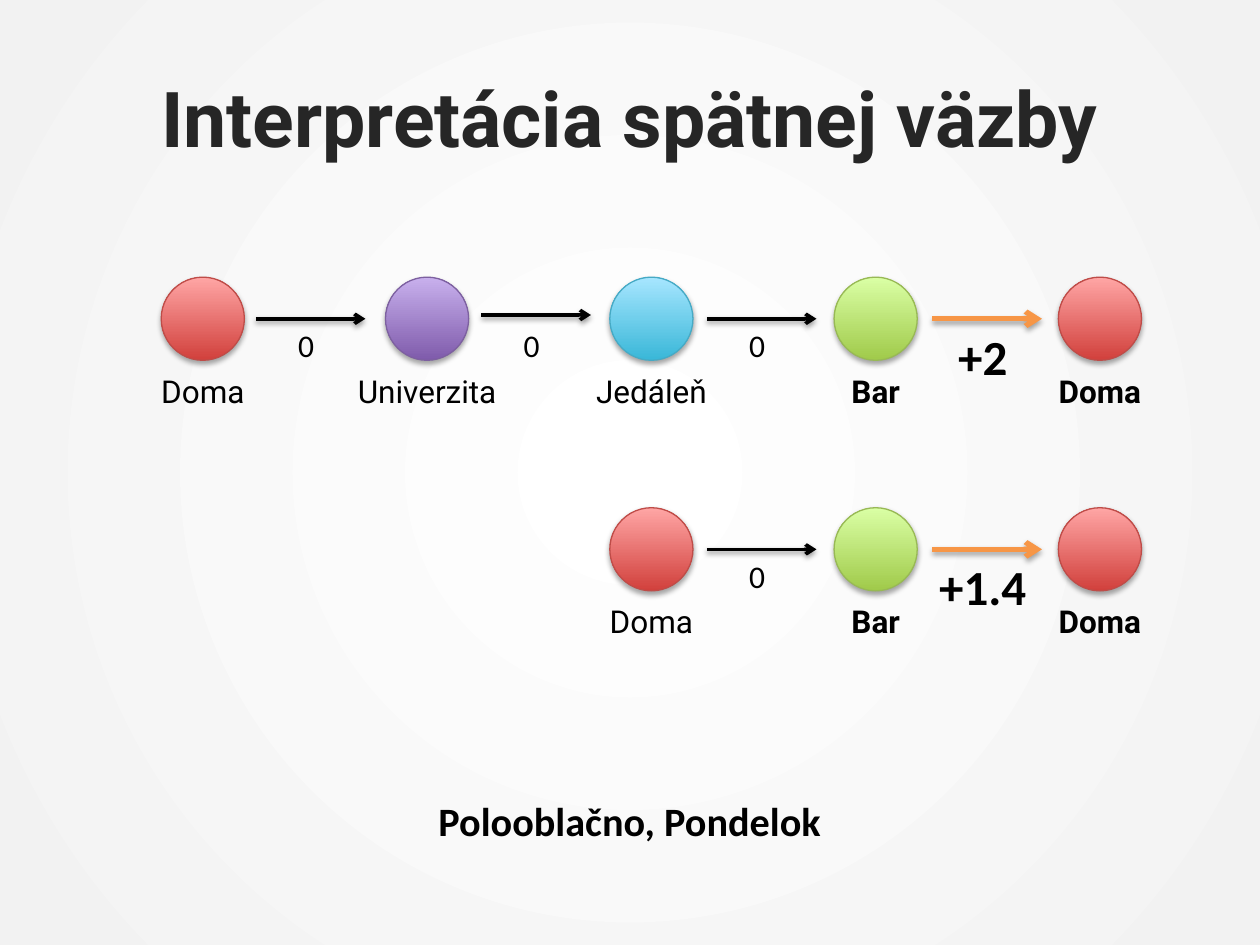
from dataclasses import dataclass

from lxml import etree
from pptx import Presentation
from pptx.dml.color import RGBColor
from pptx.enum.shapes import MSO_CONNECTOR as CONN, MSO_SHAPE as SHAPE
from pptx.enum.text import MSO_ANCHOR as ANCHOR, MSO_AUTO_SIZE as FIT, PP_ALIGN as ALIGN
from pptx.oxml.ns import qn
from pptx.util import Inches, Pt


@dataclass(frozen=True)
class Theme:
    head: str = "Roboto"
    body: str = "Calibri"
    title: str = "262626"
    ink: str = "000000"
    accent: str = "F79646"
    back: tuple = ("FFFFFF", "F2F2F2")
    # bottom, top, outline
    red: tuple = ("D1403C", "FFA6A5", "BF4C48")
    purple: tuple = ("7F5BAB", "C8B0ED", "7D60A0")
    blue: tuple = ("39B7D8", "A7E6FF", "46AAC5")
    green: tuple = ("A0CA4A", "DAFFA5", "98B955")
    title_size: int = 44
    reward_size: int = 28
    caption_size: int = 23
    label_size: int = 18


THEME = Theme()
rgb = RGBColor.from_string

# Grid of the chains, in inches
LEFT, PITCH, SIZE = 1.28, 1.78, 0.66
ARROW_LEFT, ARROW_PITCH, ARROW_LEN = 2.03, 1.79, 0.87
LABEL_GAP = 0.37

# Place name: colours, label width
PLACES = {
    "Doma": (THEME.red, 0.87),
    "Univerzita": (THEME.purple, 1.37),
    "Jedáleň": (THEME.blue, 1.09),
    "Bar": (THEME.green, 0.61),
}

# Centre line, first column, places, rewards as (text, width, arrow shift)
CHAINS = [
    (2.53, 0, ["Doma", "Univerzita", "Jedáleň", "Bar", "Doma"],
     [("0", 0.33, 0), ("0", 0.33, -0.03), ("0", 0.33, 0), ("+2", 0.6, 0)]),
    (4.36, 2, ["Doma", "Bar", "Doma"], [("0", 0.33, 0), ("+1.4", 0.9, 0)]),
]


class Painter:
    def __init__(self, slide, theme):
        self.slide, self.theme = slide, theme

    def gradient(self, fill, colors):
        fill.gradient()
        for stop, color in zip(fill.gradient_stops, colors):
            stop.color.rgb = rgb(color)

    def background(self):
        fill = self.slide.background.fill
        self.gradient(fill, self.theme.back)
        lin = next(self.slide.element.iter(qn("a:lin")))
        path = etree.Element(qn("a:path"), path="circle")
        etree.SubElement(path, qn("a:fillToRect"), dict.fromkeys("ltrb", "50000"))
        lin.getparent().replace(lin, path)

    def shadow(self, s, dist, alpha):
        effects = etree.SubElement(s.element.spPr, qn("a:effectLst"))
        outer = etree.SubElement(effects, qn("a:outerShdw"), blurRad=str(Pt(3.1)),
                                 dist=str(Pt(dist)), dir="5400000", rotWithShape="0")
        color = etree.SubElement(outer, qn("a:srgbClr"), val=self.theme.ink)
        etree.SubElement(color, qn("a:alpha"), val=str(alpha * 1000))

    def text(self, text, x, y, w, h, size, font, color=None, bold=False, wrap=False):
        tb = self.slide.shapes.add_textbox(Inches(x), Inches(y), Inches(w), Inches(h))
        tf = tb.text_frame
        frame = {"word_wrap": wrap,
                 "auto_size": FIT.NONE if wrap else FIT.SHAPE_TO_FIT_TEXT,
                 "vertical_anchor": ANCHOR.MIDDLE if wrap else ANCHOR.TOP}
        for name, value in frame.items():
            setattr(tf, name, value)
        p = tf.paragraphs[0]
        p.alignment = ALIGN.CENTER
        r = p.add_run()
        r.text = text
        for name, value in {"size": Pt(size), "name": font, "bold": bold}.items():
            setattr(r.font, name, value)
        r.font.color.rgb = rgb(color or self.theme.ink)

    def ball(self, x, y, colors):
        s = self.slide.shapes.add_shape(SHAPE.OVAL, Inches(x), Inches(y),
                                        Inches(SIZE), Inches(SIZE))
        bottom, top, outline = colors
        self.gradient(s.fill, (bottom, top))
        s.fill.gradient_angle = 90
        s.line.color.rgb = rgb(outline)
        s.line.width = Pt(0.75)
        self.shadow(s, 1.8, 35)

    def arrow(self, x, y, strong):
        s = self.slide.shapes.add_connector(CONN.STRAIGHT, Inches(x), Inches(y),
                                            Inches(x + ARROW_LEN), Inches(y))
        s.line.color.rgb = rgb(self.theme.accent if strong else self.theme.ink)
        s.line.width = Pt(3 if strong else 2)
        etree.SubElement(s.element.spPr.find(qn("a:ln")), qn("a:tailEnd"), type="arrow")
        self.shadow(s, *((1.8, 35) if strong else (1.6, 38)))

    def chain(self, y, first, places, rewards):
        t = self.theme
        # Places; the last two are the rewarded pair
        for i, place in enumerate(places):
            colors, width = PLACES[place]
            x = LEFT + PITCH * (first + i)
            self.ball(x, y - SIZE / 2, colors)
            self.text(place, x + (SIZE - width) / 2, y + LABEL_GAP, width, 0.4,
                      t.label_size, t.head, bold=i >= len(places) - 2)
        # Steps with their rewards
        for i, (reward, width, shift) in enumerate(rewards):
            strong = reward != "0"
            x = ARROW_LEFT + ARROW_PITCH * (first + i)
            self.arrow(x, y + shift, strong)
            self.text(reward, x + 0.4 - width / 2, y + 0.01, width,
                      0.57 if strong else 0.4,
                      t.reward_size if strong else t.label_size, t.body, bold=strong)


def main():
    prs = Presentation()
    prs.slide_width, prs.slide_height = Inches(10), Inches(7.5)
    painter = Painter(prs.slides.add_slide(prs.slide_layouts[6]), THEME)
    painter.background()

    # Title and caption
    painter.text("Interpretácia spätnej väzby", 0.5, 0.3, 9, 1.25, THEME.title_size,
                 THEME.head, THEME.title, bold=True, wrap=True)
    painter.text("Polooblačno, Pondelok", 3.36, 6.27, 3.28, 0.49,
                 THEME.caption_size, THEME.body, bold=True)

    # Chains of places
    for chain in CHAINS:
        painter.chain(*chain)

    prs.save("out.pptx")


if __name__ == "__main__":
    main()
